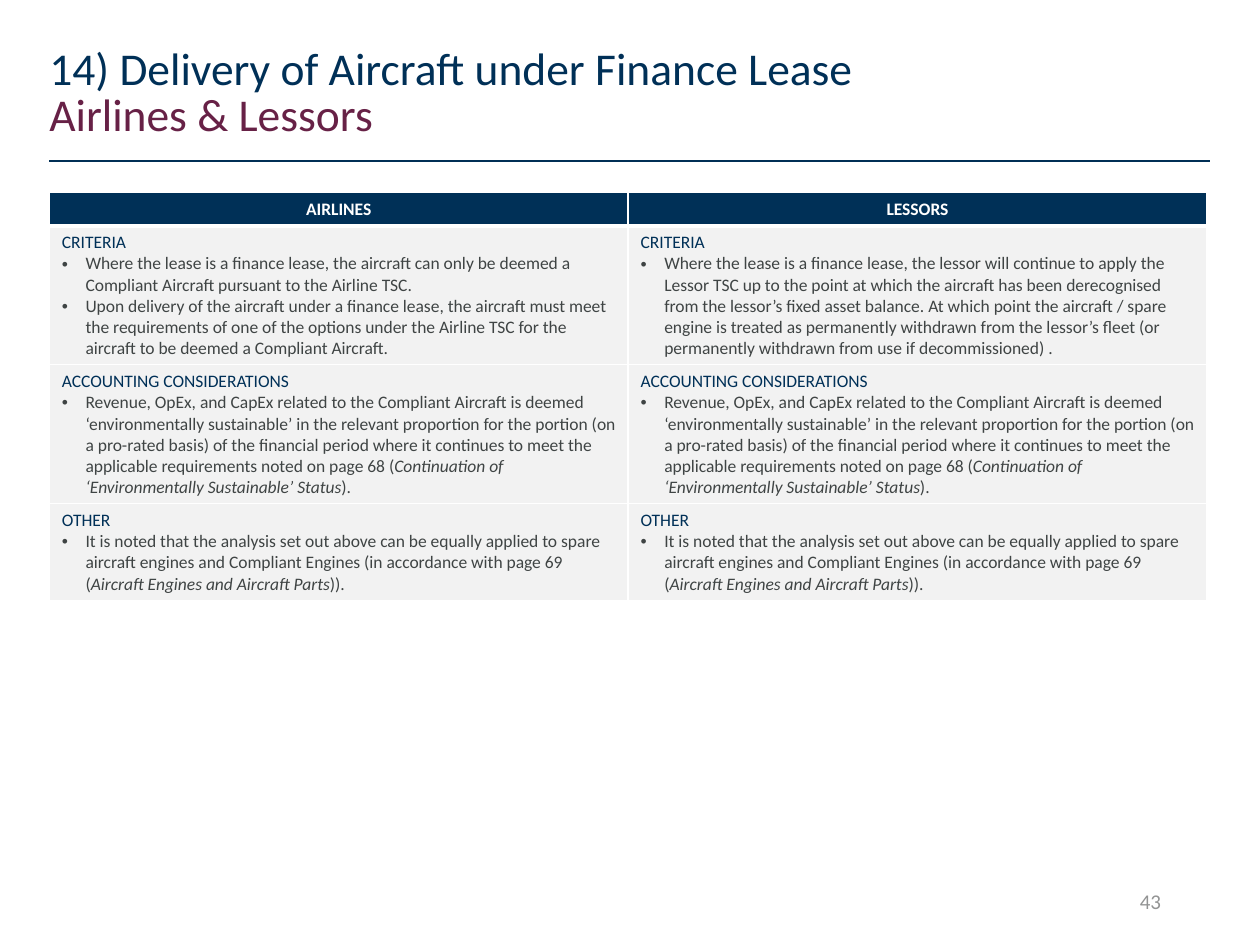
from dataclasses import dataclass

from lxml import etree
from pptx import Presentation
from pptx.dml.color import RGBColor
from pptx.enum.shapes import MSO_CONNECTOR
from pptx.enum.text import MSO_ANCHOR, PP_ALIGN
from pptx.oxml.ns import qn
from pptx.util import Pt

LEFT, CENTER, RIGHT = PP_ALIGN.LEFT, PP_ALIGN.CENTER, PP_ALIGN.RIGHT
TOP, MIDDLE = MSO_ANCHOR.TOP, MSO_ANCHOR.MIDDLE
STRAIGHT = MSO_CONNECTOR.STRAIGHT

NAVY = RGBColor(0x00, 0x30, 0x57)
RULE = RGBColor(0x00, 0x2F, 0x55)
PLUM = RGBColor(0x67, 0x21, 0x46)
BODY = RGBColor(0x3F, 0x44, 0x44)
GREY = RGBColor(0x93, 0x94, 0x94)
PALE = RGBColor(0xF2, 0xF2, 0xF2)
WHITE = RGBColor(0xFF, 0xFF, 0xFF)

FONT = "Calibri"
MARGIN = 28.2
WIDTH = 663
COL_WIDTH = 330.7
INDENT = 13.5


@dataclass(frozen=True)
class Span:
    text: str
    italic: bool = False


@dataclass(frozen=True)
class Section:
    heading: str
    bullets: tuple[tuple[Span, ...], ...]


AIRLINE_CRITERIA = Section("CRITERIA", (
    (Span("Where the lease is a finance lease, the aircraft can only be deemed a "
          "Compliant Aircraft pursuant to the Airline TSC."),),
    (Span("Upon delivery of the aircraft under a finance lease, the aircraft must meet "
          "the requirements of one of the options under the Airline TSC for the "
          "aircraft to be deemed a Compliant Aircraft."),),
))
LESSOR_CRITERIA = Section("CRITERIA", (
    (Span("Where the lease is a finance lease, the lessor will continue to apply the "
          "Lessor TSC up to the point at which the aircraft has been derecognised from "
          "the lessor’s fixed asset balance. At which point the aircraft / spare engine "
          "is treated as permanently withdrawn from the lessor’s fleet (or permanently "
          "withdrawn from use if decommissioned) ."),),
))
ACCOUNTING = Section("ACCOUNTING CONSIDERATIONS", (
    (Span("Revenue, OpEx, and CapEx related to the Compliant Aircraft is deemed "
          "‘environmentally sustainable’ in the relevant proportion for the portion (on "
          "a pro-rated basis) of the financial period where it continues to meet the "
          "applicable requirements noted on page 68 ("),
     Span("Continuation of ‘Environmentally Sustainable’ Status", italic=True),
     Span(").")),
))
OTHER = Section("OTHER", (
    (Span("It is noted that the analysis set out above can be equally applied to spare "
          "aircraft engines and Compliant Engines (in accordance with page 69 ("),
     Span("Aircraft Engines and Aircraft Parts", italic=True),
     Span(")).")),
))

HEADERS = ("AIRLINES", "LESSORS")
SECTION_ROWS = (
    (AIRLINE_CRITERIA, LESSOR_CRITERIA),
    (ACCOUNTING, ACCOUNTING),
    (OTHER, OTHER),
)
ROW_HEIGHTS = (18.7, 78, 78, 42.5)


def add_run(p, text: str, size: float, color: RGBColor,
            bold: bool = False, italic: bool = False) -> None:
    r = p.add_run()
    r.text = text
    f = r.font
    f.name, f.size, f.bold, f.italic = FONT, Pt(size), bold, italic
    f.color.rgb = color


def add_bullet(p) -> None:
    pPr = p._p.get_or_add_pPr()
    pPr.set("marL", str(Pt(INDENT)))
    pPr.set("indent", str(-Pt(INDENT)))
    etree.SubElement(pPr, qn("a:buFont"), typeface="Arial")
    etree.SubElement(pPr, qn("a:buChar"), char="•")


def format_cell(cell, fill: RGBColor, top: float, bottom: float) -> None:
    """Give the cell white borders and a solid fill."""
    tcPr = cell._tc.get_or_add_tcPr()
    for side, width in (("L", 1), ("R", 1), ("T", top), ("B", bottom)):
        ln = etree.SubElement(tcPr, qn(f"a:ln{side}"), w=str(Pt(width)))
        solid = etree.SubElement(ln, qn("a:solidFill"))
        etree.SubElement(solid, qn("a:srgbClr"), val=str(WHITE))
    cell.fill.solid()
    cell.fill.fore_color.rgb = fill


def fill_section(tf, section: Section) -> None:
    add_run(tf.paragraphs[0], section.heading, 10, NAVY)
    for spans in section.bullets:
        p = tf.add_paragraph()
        add_bullet(p)
        for span in spans:
            add_run(p, span.text, 10, BODY, italic=span.italic)


def add_lease_table(s) -> None:
    tbl = s.shapes.add_table(len(ROW_HEIGHTS), len(HEADERS), Pt(MARGIN), Pt(109.8),
                             Pt(2 * COL_WIDTH), Pt(sum(ROW_HEIGHTS))).table
    for col in tbl.columns:
        col.width = Pt(COL_WIDTH)
    for row, height in zip(tbl.rows, ROW_HEIGHTS):
        row.height = Pt(height)
    for c, header in enumerate(HEADERS):
        cell = tbl.cell(0, c)
        format_cell(cell, NAVY, top=1, bottom=3)
        p = cell.text_frame.paragraphs[0]
        p.alignment = CENTER
        add_run(p, header, 10, WHITE, bold=True)
    for i, sections in enumerate(SECTION_ROWS, start=1):
        for c, section in enumerate(sections):
            cell = tbl.cell(i, c)
            format_cell(cell, PALE, top=3 if i == 1 else 1, bottom=1)
            fill_section(cell.text_frame, section)


def set_heading(sp, top: float, text: str, color: RGBColor) -> None:
    sp.left, sp.top, sp.width, sp.height = Pt(MARGIN), Pt(top), Pt(WIDTH), Pt(28)
    tf = sp.text_frame
    tf.word_wrap = True
    tf.vertical_anchor = TOP
    tf.margin_left = tf.margin_right = tf.margin_top = tf.margin_bottom = 0
    p = tf.paragraphs[0]
    p.alignment = LEFT
    p.line_spacing = Pt(26)
    add_run(p, text, 26, color)


def add_page_number(s, number: str) -> None:
    tf = s.shapes.add_textbox(Pt(508.5), Pt(500.5), Pt(162), Pt(28.75)).text_frame
    tf.word_wrap = True
    tf.vertical_anchor = MIDDLE
    p = tf.paragraphs[0]
    p.alignment = RIGHT
    add_run(p, number, 12, GREY)


def add_rule(s, y: float) -> None:
    line = s.shapes.add_connector(STRAIGHT, Pt(MARGIN), Pt(y), Pt(MARGIN + WIDTH), Pt(y))
    line.line.color.rgb = RULE
    line.line.width = Pt(0.75)
    etree.SubElement(line._element.spPr, qn("a:effectLst"))


def main() -> None:
    prs = Presentation()
    prs.slide_width, prs.slide_height = Pt(720), Pt(540)
    s = prs.slides.add_slide(prs.slide_layouts[5])
    add_rule(s, 92)
    set_heading(s.shapes.title, 28.2, "14) Delivery of Aircraft under Finance Lease", NAVY)
    subtitle = s.shapes.add_textbox(0, 0, 0, 0)
    set_heading(subtitle, 54.4, "Airlines & Lessors", PLUM)
    add_lease_table(s)
    add_page_number(s, "43")
    prs.save("out.pptx")


if __name__ == "__main__":
    main()
